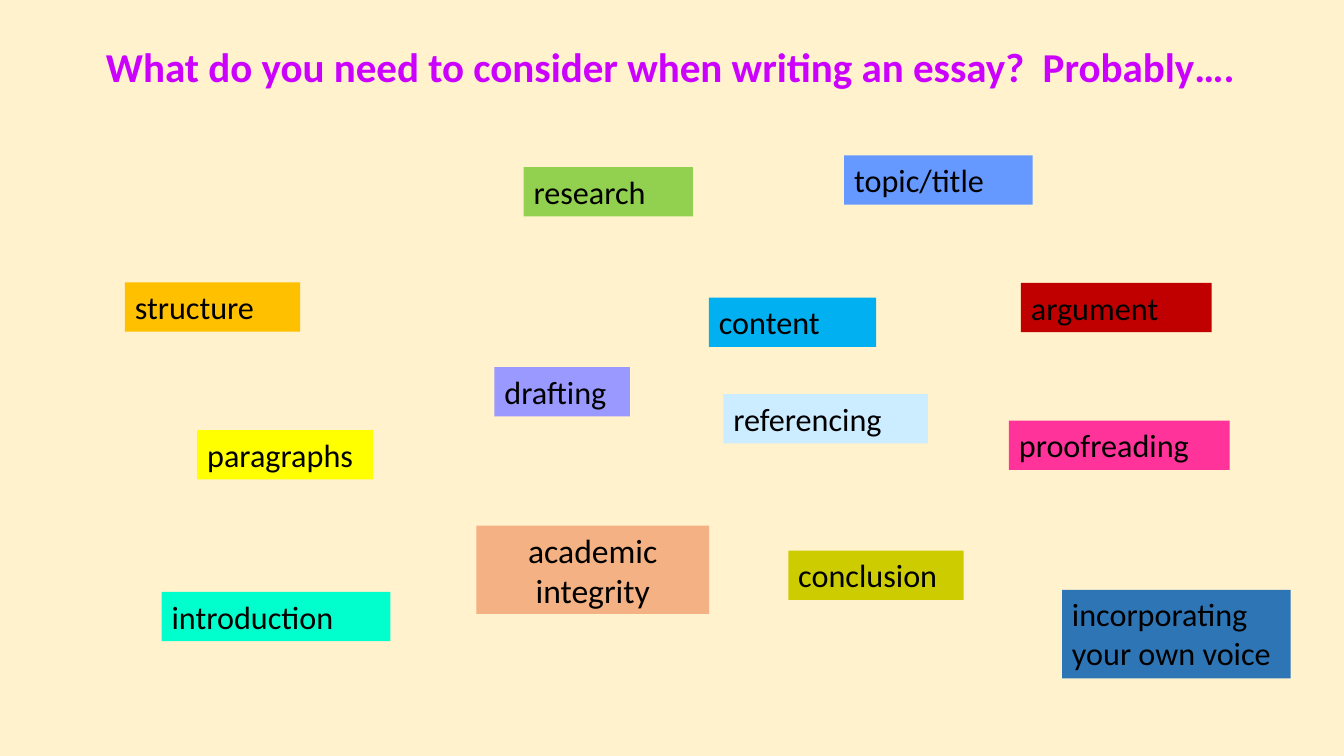
from dataclasses import dataclass

from pptx import Presentation
from pptx.dml.color import RGBColor
from pptx.enum.shapes import MSO_SHAPE as Shape
from pptx.enum.text import MSO_ANCHOR as Anchor, MSO_AUTO_SIZE as AutoSize, PP_ALIGN as Align
from pptx.util import Pt


@dataclass(frozen=True)
class Theme:
    font: str = "Calibri"
    background: str = "FFF2CC"
    title: str = "CC00FF"
    text: str = "000000"
    title_size: float = 29.3
    card_size: float = 23
    centre_size: float = 24


THEME = Theme()
ONE_LINE, TWO_LINES = 35.2, 63.2  # card heights

# Word, left, top, width, height, fill
CARDS = [
    ("structure", 89.2, 201.8, 125.2, ONE_LINE, "FFC000"),
    ("argument", 729.3, 202.1, 136.3, ONE_LINE, "C00000"),
    ("paragraphs", 140.9, 307.3, 125.4, ONE_LINE, "FFFF00"),
    ("research", 374, 119.4, 121, ONE_LINE, "92D050"),
    ("content", 506.4, 212.6, 119.4, ONE_LINE, "00B0F0"),
    ("proofreading", 720.7, 300.5, 157.7, ONE_LINE, "FF3399"),
    ("drafting", 353.2, 262.2, 96.7, ONE_LINE, "9999FF"),
    ("referencing", 516.7, 281.6, 146.2, ONE_LINE, "CCECFF"),
    ("introduction", 115.5, 422.8, 163.4, ONE_LINE, "00FFCC"),
    ("incorporating your own voice", 758.6, 421.3, 163.4, TWO_LINES, "2E75B6"),
    ("conclusion", 563.1, 393.3, 125.3, ONE_LINE, "CCCC00"),
    ("topic/title", 603, 111, 134.6, ONE_LINE, "6699FF"),
]
CENTRE_CARD = ("academic integrity", 340.3, 375.4, 166.2, TWO_LINES, "F4B183")


def write_text(frame, text, *, size, color=THEME.text, bold=False, align=Align.LEFT,
               anchor=Anchor.TOP, line_spacing=None, after=0, margins=(7.2, 3.6)):
    """Fill a text frame with one formatted paragraph."""
    frame.word_wrap = True
    frame.auto_size = AutoSize.NONE
    frame.vertical_anchor = anchor
    frame.margin_left = frame.margin_right = Pt(margins[0])
    frame.margin_top = frame.margin_bottom = Pt(margins[1])
    para = frame.paragraphs[0]
    para.alignment = align
    para.line_spacing = line_spacing
    para.space_after = Pt(after)
    span = para.add_run()
    span.text = text
    span.font.name = THEME.font
    span.font.size = Pt(size)
    span.font.bold = bold
    span.font.color.rgb = RGBColor.from_string(color)


def place_title(page, text, left, top, width, height):
    title = page.shapes.title
    title.left, title.top, title.width, title.height = map(Pt, (left, top, width, height))
    write_text(title.text_frame, text, size=THEME.title_size, color=THEME.title, bold=True,
               anchor=Anchor.MIDDLE, line_spacing=0.9, margins=(9.4, 5))


def add_card(page, text, left, top, width, height, fill, **text_format):
    card = page.shapes.add_shape(Shape.RECTANGLE, *map(Pt, (left, top, width, height)))
    card.shadow.inherit = False
    card.fill.solid()
    card.fill.fore_color.rgb = RGBColor.from_string(fill)
    card.line.fill.background()
    write_text(card.text_frame, text, **text_format)


def build_word_slide(deck):
    page = deck.slides.add_slide(deck.slide_layouts.get_by_name("Title Only"))
    page.background.fill.solid()
    page.background.fill.fore_color.rgb = RGBColor.from_string(THEME.background)

    # Heading
    place_title(page, "What do you need to consider when writing an essay?  Probably….",
                66.2, 13.7, 841.7, 72)

    # Scattered word cards
    for card in CARDS:
        add_card(page, *card, size=THEME.card_size, after=8)

    # Centred card
    add_card(page, *CENTRE_CARD, size=THEME.centre_size, align=Align.CENTER,
             anchor=Anchor.MIDDLE)


def main():
    deck = Presentation()
    deck.slide_width, deck.slide_height = Pt(960), Pt(540)
    build_word_slide(deck)
    deck.save("out.pptx")


if __name__ == "__main__":
    main()
